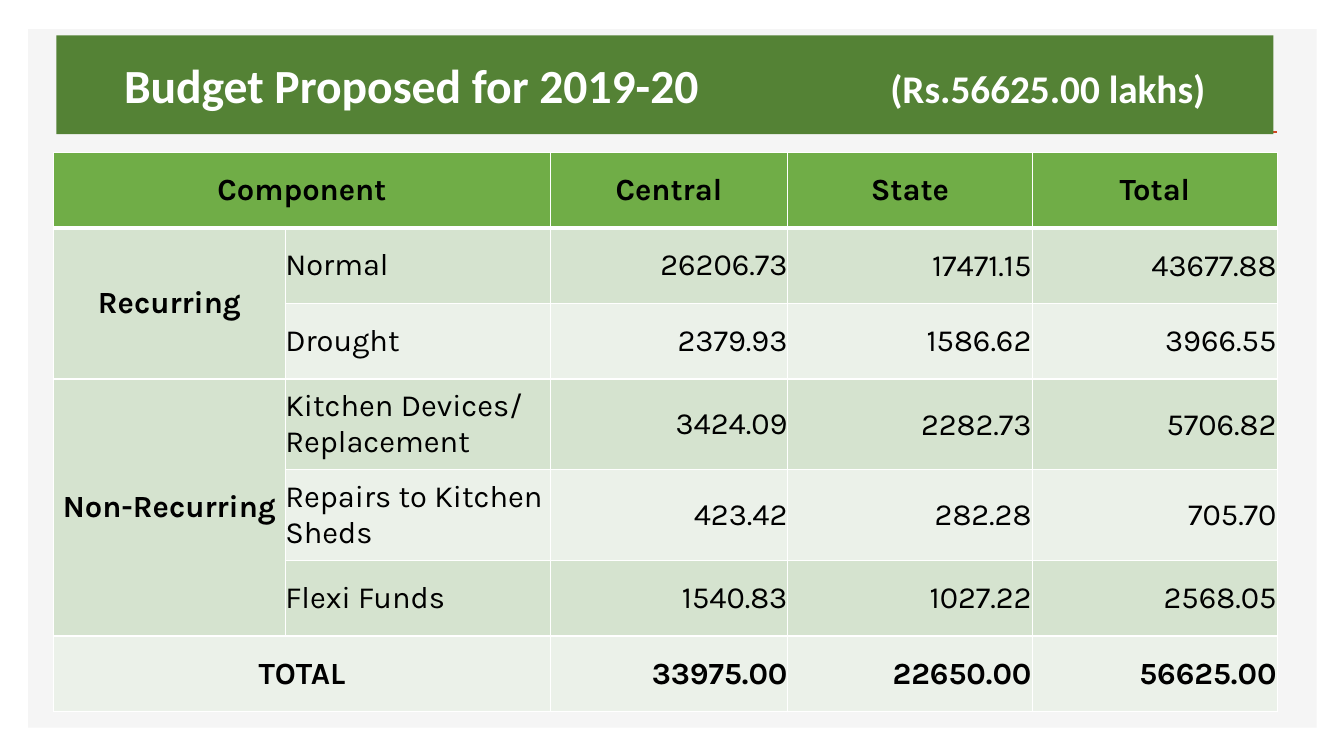
from dataclasses import dataclass

from lxml import etree
from pptx import Presentation
from pptx.dml.color import RGBColor
from pptx.enum.shapes import MSO_CONNECTOR, MSO_SHAPE
from pptx.enum.text import MSO_ANCHOR, MSO_AUTO_SIZE, PP_ALIGN
from pptx.oxml.ns import qn
from pptx.util import Inches, Pt

LEFT, CENTER, RIGHT = PP_ALIGN.LEFT, PP_ALIGN.CENTER, PP_ALIGN.RIGHT
MIDDLE = MSO_ANCHOR.MIDDLE


@dataclass(frozen=True)
class Theme:
    panel: str = "F5F5F5"
    accent: str = "D24726"
    banner: str = "548235"
    header: str = "70AD47"
    band_dark: str = "D5E3CF"
    band_light: str = "EBF1E9"
    white: str = "FFFFFF"
    black: str = "000000"
    title_font: str = "Calibri"
    table_font: str = "Karla"
    title_size: int = 34
    amount_size: int = 28
    table_size: int = 22


THEME = Theme()

BUDGET = [
    ["Component", "", "Central", "State", "Total"],
    ["Recurring", "Normal", "26206.73", "17471.15", "43677.88"],
    ["", "Drought", "2379.93", "1586.62", "3966.55"],
    ["Non-Recurring", "Kitchen Devices/ Replacement", "3424.09", "2282.73", "5706.82"],
    ["", "Repairs to Kitchen Sheds", "423.42", "282.28", "705.70"],
    ["", "Flexi Funds", "1540.83", "1027.22", "2568.05"],
    ["TOTAL", "", "33975.00", "22650.00", "56625.00"],
]
LAST_ROW = len(BUDGET) - 1
COL_WIDTHS = [2.3, 2.63, 2.35, 2.43, 2.43]
ROW_HEIGHTS = [0.75, 0.75, 0.75, 0.9, 0.9, 0.75, 0.75]
MERGES = [((0, 0), (0, 1)), ((1, 0), (2, 0)), ((3, 0), (5, 0)), ((6, 0), (6, 1))]


def rgb(color):
    return RGBColor.from_string(color)


def style_run(r, font, size, color, bold):
    r.font.name = font
    r.font.size = Pt(size)
    r.font.color.rgb = rgb(color)
    r.font.bold = bold


def add_panel(s):
    sp = s.shapes.add_shape(MSO_SHAPE.RECTANGLE, Inches(0.28), Inches(0.29),
                            Inches(12.78), Inches(6.93))
    sp.shadow.inherit = False
    sp.fill.solid()
    sp.fill.fore_color.rgb = rgb(THEME.panel)
    sp.line.fill.background()


def add_rule(s):
    line = s.shapes.add_connector(MSO_CONNECTOR.STRAIGHT, Inches(0.66), Inches(1.31),
                                  Inches(12.67), Inches(1.31))
    line.line.color.rgb = rgb(THEME.accent)
    line.line.width = Pt(2)
    etree.SubElement(line._element.spPr, qn("a:effectLst"))


def add_tab_stop(p, position):
    tabs = etree.SubElement(p._p.get_or_add_pPr(), qn("a:tabLst"))
    etree.SubElement(tabs, qn("a:tab"), pos=str(position), algn="l")


def add_banner(s):
    """Format the title as a banner, in front of the panel and the rule."""
    title = s.shapes.title
    s.shapes._spTree.append(title._element)
    title.left, title.top = Inches(0.56), Inches(0.35)
    title.width, title.height = Inches(12.07), Inches(0.98)
    title.fill.solid()
    title.fill.fore_color.rgb = rgb(THEME.banner)
    tf = title.text_frame
    tf.auto_size = MSO_AUTO_SIZE.NONE
    tf.vertical_anchor = MIDDLE
    tf.margin_left = Inches(0.67)
    p = tf.paragraphs[0]
    p.alignment = LEFT
    add_tab_stop(p, Inches(7.6))
    for text, size in (("Budget Proposed for 2019-20\t", THEME.title_size),
                       ("(Rs.56625.00 lakhs)", THEME.amount_size)):
        r = p.add_run()
        r.text = text
        style_run(r, THEME.title_font, size, THEME.white, True)


def set_borders(cell, row):
    """Draw thin white borders, with a thick one under the header row."""
    widths = {"L": 1, "R": 1, "T": 3 if row == 1 else 1, "B": 3 if row == 0 else 1}
    for side, width in widths.items():
        ln = etree.SubElement(cell._tc.get_or_add_tcPr(), qn(f"a:ln{side}"),
                              w=str(Pt(width)))
        fill = etree.SubElement(ln, qn("a:solidFill"))
        etree.SubElement(fill, qn("a:srgbClr"), val=THEME.white)


def cell_fill(row):
    if row == 0:
        return THEME.header
    return THEME.band_dark if row % 2 else THEME.band_light


def cell_alignment(row, col):
    if row == 0 or col == 0:
        return CENTER
    return LEFT if col == 1 else RIGHT


def format_cell(cell, row, col):
    set_borders(cell, row)
    cell.fill.solid()
    cell.fill.fore_color.rgb = rgb(cell_fill(row))
    cell.vertical_anchor = MIDDLE
    inset = Inches(0.01) if row > 0 and col > 2 else 0
    cell.margin_left = cell.margin_right = cell.margin_top = inset
    cell.margin_bottom = 0
    p = cell.text_frame.paragraphs[0]
    p.alignment = cell_alignment(row, col)
    bold = row in (0, LAST_ROW) or col == 0
    for r in p.runs:
        style_run(r, THEME.table_font, THEME.table_size, THEME.black, bold)


def add_budget_table(s):
    table = s.shapes.add_table(len(BUDGET), len(COL_WIDTHS), Inches(0.53), Inches(1.51),
                               Inches(sum(COL_WIDTHS)), Inches(sum(ROW_HEIGHTS))).table
    for column, width in zip(table.columns, COL_WIDTHS):
        column.width = Inches(width)
    for table_row, height in zip(table.rows, ROW_HEIGHTS):
        table_row.height = Inches(height)
    for first, last in MERGES:
        table.cell(*first).merge(table.cell(*last))
    for row, values in enumerate(BUDGET):
        for col, value in enumerate(values):
            cell = table.cell(row, col)
            if value:
                cell.text_frame.text = value
            format_cell(cell, row, col)


def main():
    prs = Presentation()
    prs.slide_width, prs.slide_height = Inches(13.33), Inches(7.5)
    s = prs.slides.add_slide(prs.slide_layouts.get_by_name("Title Only"))
    add_panel(s)
    add_rule(s)
    add_budget_table(s)
    add_banner(s)
    prs.save("out.pptx")


if __name__ == "__main__":
    main()
